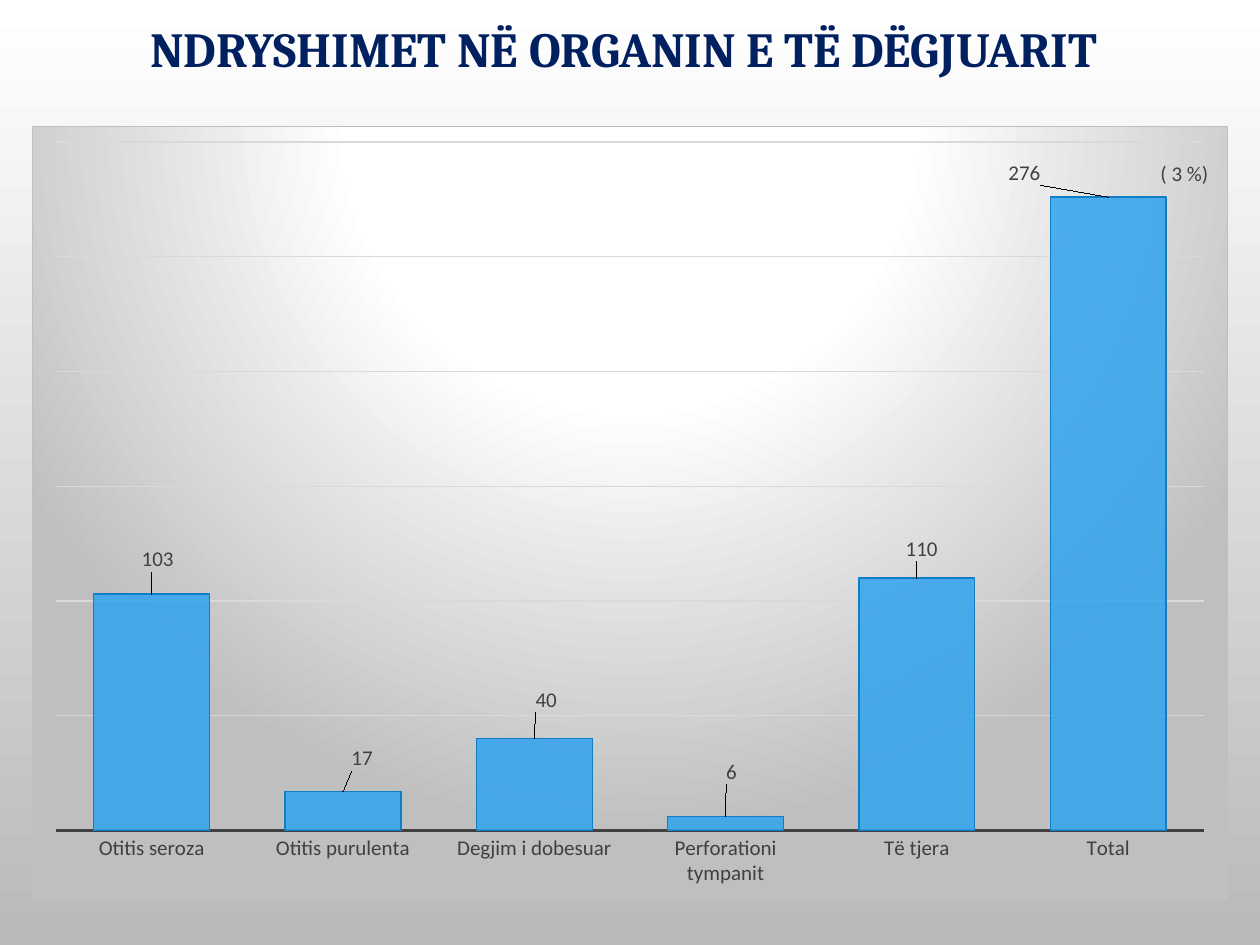
import pptx
import pptx.chart.data
import pptx.dml.color
import pptx.enum.chart
import pptx.enum.text
import pptx.oxml
import pptx.oxml.ns
import pptx.util

RGBColor = pptx.dml.color.RGBColor
NAVY = RGBColor(0x00, 0x20, 0x60)
SKY = RGBColor(0x2F, 0xA3, 0xEE)
BLUE = RGBColor(0x10, 0x7E, 0xC6)
INK = RGBColor(0x40, 0x40, 0x40)
GRID = RGBColor(0xD9, 0xD9, 0xD9)
SILVER = RGBColor(0xBF, 0xBF, 0xBF)
ASH = RGBColor(0xB9, 0xB9, 0xB9)
WHITE = RGBColor(0xFF, 0xFF, 0xFF)

WIDTH, HEIGHT = pptx.util.Inches(10), pptx.util.Inches(7.5)
TITLE_FONT = {"name": "Cambria", "size": pptx.util.Pt(28), "bold": True}
LABEL_FONT = {"name": "Calibri", "size": pptx.util.Pt(12), "bold": False}

FINDINGS = [
    ("Otitis seroza", 103, (0.005, -0.022)),
    ("Otitis purulenta", 17, (0.016, -0.02)),
    ("Degjim i dobesuar", 40, (0.01, -0.027)),
    ("Perforationi tympanit", 6, (0.005, -0.035)),
    ("Të tjera", 110, (0.004, -0.015)),
    ("Total", 276, (-0.07, -0.009)),
]


def xml(tag, body):
    spaces = pptx.oxml.ns.nsdecls("c", "a")
    return pptx.oxml.parse_xml(f"<{tag} {spaces}>{body}</{tag}>")


def manual_layout(**values):
    parts = "".join(f'<c:{key} val="{value}"/>' for key, value in values.items())
    return xml("c:layout", f"<c:manualLayout>{parts}</c:manualLayout>")


def set_format(target, values):
    for name, value in values.items():
        setattr(target, name, value)


def style_font(font, values, color):
    set_format(font, values)
    font.color.rgb = color


def style_line(line, color, width):
    line.color.rgb = color
    line.width = pptx.util.Pt(width)


def paint_background(slide):
    fill = slide.background.fill
    fill.gradient()
    fill.gradient_angle = 270
    for stop, color, position in zip(fill.gradient_stops, (WHITE, ASH), (0, 1)):
        stop.color.rgb = color
        stop.position = position


def add_text(slide, text, shares, font, color):
    left, top, width, height = shares
    box = slide.shapes.add_textbox(
        int(WIDTH * left), int(HEIGHT * top), int(WIDTH * width), int(HEIGHT * height))
    frame = box.text_frame
    set_format(frame, {
        "word_wrap": True, "margin_left": 0, "margin_right": 0,
        "vertical_anchor": pptx.enum.text.MSO_ANCHOR.MIDDLE})
    paragraph = frame.paragraphs[0]
    set_format(paragraph, {
        "text": text, "alignment": pptx.enum.text.PP_ALIGN.CENTER, "line_spacing": 0.9})
    style_font(paragraph.runs[0].font, font, color)


def fill_chart_area(chart):
    stops = "".join(
        f'<a:gs pos="{share * 1000}"><a:srgbClr val="{color}"/></a:gs>'
        for share, color in ((0, WHITE), (39, WHITE), (100, SILVER)))
    area = xml("c:spPr", (
        f'<a:gradFill><a:gsLst>{stops}</a:gsLst><a:path path="circle">'
        '<a:fillToRect l="50000" t="-80000" r="50000" b="180000"/></a:path></a:gradFill>'
        f'<a:ln w="9525"><a:solidFill><a:srgbClr val="{SILVER}"/></a:solidFill></a:ln>'))
    chart.element.find(pptx.oxml.ns.qn("c:chart")).addnext(area)


def style_axes(chart):
    none = pptx.enum.chart.XL_TICK_MARK.NONE
    for axis in (chart.category_axis, chart.value_axis):
        set_format(axis, {"major_tick_mark": none, "minor_tick_mark": none})
        style_font(axis.tick_labels.font, LABEL_FONT, INK)
    style_line(chart.category_axis.format.line, INK, 1.5)
    counts = chart.value_axis
    set_format(counts, {
        "minimum_scale": 0, "maximum_scale": 300, "major_unit": 50,
        "has_major_gridlines": True,
        "tick_label_position": pptx.enum.chart.XL_TICK_LABEL_POSITION.NONE})
    counts.format.line.fill.background()
    style_line(counts.major_gridlines.format.line, GRID, 0.75)


def style_bars(plot):
    set_format(plot, {"gap_width": 65, "vary_by_categories": False})
    bars = plot.series[0]
    bars.format.fill.solid()
    bars.format.fill.fore_color.rgb = SKY
    tint = bars.format.fill._xPr.find(".//" + pptx.oxml.ns.qn("a:srgbClr"))
    tint.append(xml("a:alpha", ""))
    tint[0].set("val", "85000")
    style_line(bars.format.line, BLUE, 0.75)
    outside = pptx.enum.chart.XL_LABEL_POSITION.OUTSIDE_END
    set_format(bars.data_labels, {"show_value": True, "position": outside})
    style_font(bars.data_labels.font, LABEL_FONT, INK)
    for index, (_, _, (shift_x, shift_y)) in enumerate(FINDINGS):
        label = bars.points[index].data_label
        label.position = outside
        style_font(label.font, LABEL_FONT, INK)
        mark = bars.data_labels._element.findall(pptx.oxml.ns.qn("c:dLbl"))[index]
        mark.find(pptx.oxml.ns.qn("c:idx")).addnext(manual_layout(x=shift_x, y=shift_y))


def add_findings_chart(slide):
    data = pptx.chart.data.CategoryChartData()
    data.categories = [name for name, _, _ in FINDINGS]
    data.add_series("Series 1", [count for _, count, _ in FINDINGS])
    chart = slide.shapes.add_chart(
        pptx.enum.chart.XL_CHART_TYPE.COLUMN_CLUSTERED,
        int(WIDTH * 0.025), int(HEIGHT / 7.5), int(WIDTH * 0.95), int(HEIGHT * 0.82),
        data).chart
    set_format(chart, {"has_legend": False, "has_title": False})
    style_font(chart.font, LABEL_FONT, INK)
    fill_chart_area(chart)
    style_axes(chart)
    style_bars(chart.plots[0])
    plot_area = chart.element.find(".//" + pptx.oxml.ns.qn("c:plotArea"))
    for old in plot_area.findall(pptx.oxml.ns.qn("c:layout")):
        plot_area.remove(old)
    plot_area.insert(0, manual_layout(
        layoutTarget="inner", xMode="edge", yMode="edge", x=0.02, y=0.02, w=0.96, h=0.89))


def main():
    deck = pptx.Presentation()
    set_format(deck, {"slide_width": WIDTH, "slide_height": HEIGHT})
    slide = deck.slides.add_slide(deck.slide_layouts[6])
    paint_background(slide)
    add_text(slide, "NDRYSHIMET NË ORGANIN E TË DËGJUARIT",
             (0.045, 0, 0.9, 0.11), TITLE_FONT, NAVY)
    add_findings_chart(slide)
    add_text(slide, "( 3 %)", (0.91, 0.16, 0.06, 0.05), LABEL_FONT, INK)
    deck.save("out.pptx")


if __name__ == "__main__":
    main()
